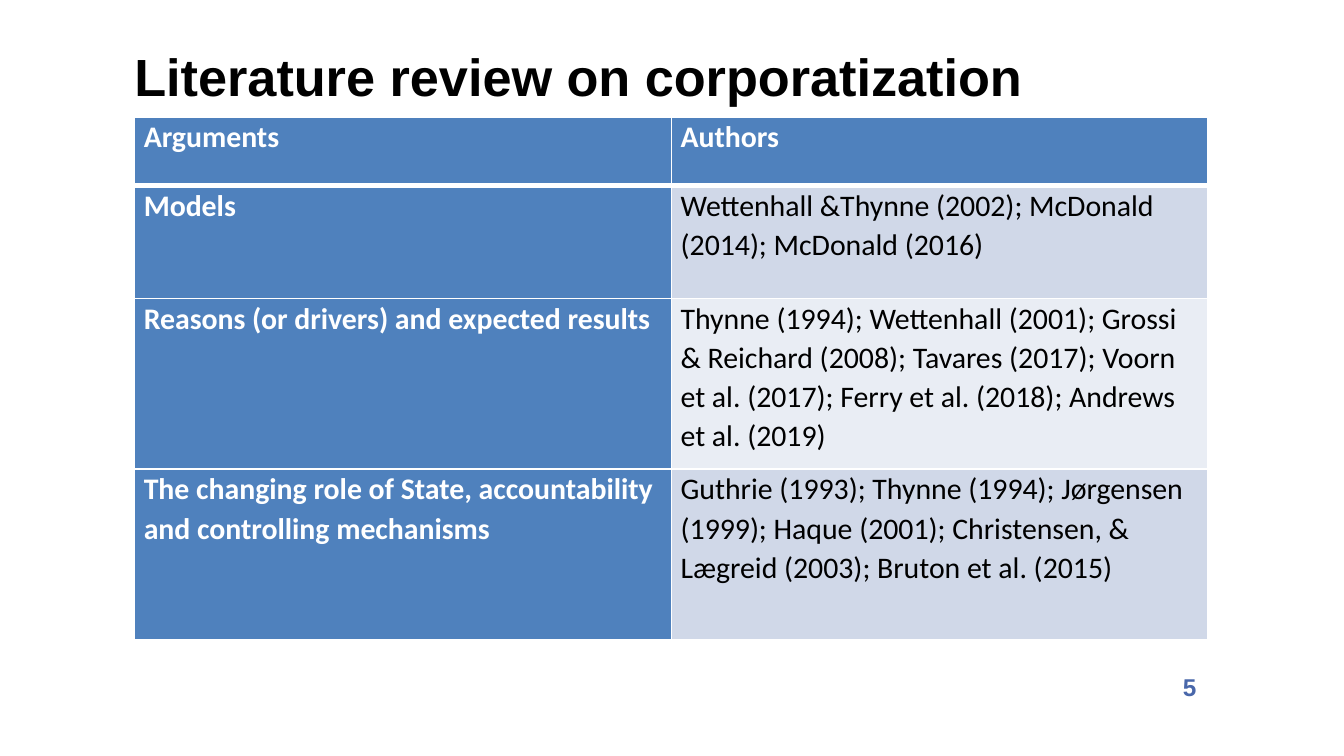
from lxml import etree
from pptx import Presentation
from pptx.dml.color import RGBColor
from pptx.enum.text import MSO_ANCHOR as Anchor, PP_ALIGN as Align
from pptx.oxml.ns import qn
from pptx.util import Inches, Pt

BLACK = RGBColor(0x00, 0x00, 0x00)
WHITE = RGBColor(0xFF, 0xFF, 0xFF)
HEADER_BLUE = RGBColor(0x4F, 0x81, 0xBD)
BAND_DARK = RGBColor(0xD0, 0xD8, 0xE8)
BAND_LIGHT = RGBColor(0xE9, 0xED, 0xF4)
NUMBER_BLUE = RGBColor(0x49, 0x67, 0xAA)

REVIEW = [
    ("Arguments", "Authors"),
    ("Models", "Wettenhall &Thynne (2002); McDonald (2014); McDonald (2016)"),
    ("Reasons (or drivers) and expected results",
     "Thynne (1994); Wettenhall (2001); Grossi & Reichard (2008); Tavares (2017); "
     "Voorn et al. (2017); Ferry et al. (2018); Andrews et al. (2019)"),
    ("The changing role of State, accountability and controlling mechanisms",
     "Guthrie (1993); Thynne (1994); Jørgensen (1999); Haque (2001); "
     "Christensen, & Lægreid (2003); Bruton et al. (2015)"),
]
ROW_HEIGHTS = [0.51, 0.84, 1.27, 1.27]


def add_run(paragraph, text, font_name, size, color, bold=True):
    run = paragraph.add_run()
    run.text = text
    run.font.name = font_name
    run.font.size = Pt(size)
    run.font.bold = bold
    run.font.color.rgb = color


def add_border(cell, side, width):
    line = etree.SubElement(cell._tc.get_or_add_tcPr(), qn(f"a:ln{side}"), w=str(Pt(width)))
    fill = etree.SubElement(line, qn("a:solidFill"))
    etree.SubElement(fill, qn("a:srgbClr"), val=str(WHITE))


# Widescreen slide, 16:9
prs = Presentation()
prs.slide_width = Inches(10)
prs.slide_height = Inches(10 * 9 / 16)
slide = prs.slides.add_slide(prs.slide_layouts[5])

# Title
title = slide.shapes.title
title.left, title.top = Inches(1), Inches(0.33)
title.width, title.height = Inches(7.99), Inches(0.71)
heading = title.text_frame
heading.margin_left = heading.margin_top = heading.margin_right = heading.margin_bottom = 0
heading.vertical_anchor = Anchor.TOP
heading.paragraphs[0].alignment = Align.LEFT
add_run(heading.paragraphs[0], "Literature review on corporatization", "Arial", 28, BLACK)

# Literature table
literature = slide.shapes.add_table(
    len(REVIEW), 2, Inches(1), Inches(0.87), Inches(7.99), Inches(sum(ROW_HEIGHTS))).table
for row, height in zip(literature.rows, ROW_HEIGHTS):
    row.height = Inches(height)

for r, entry in enumerate(REVIEW):
    for c, text in enumerate(entry):
        cell = literature.cell(r, c)
        is_heading = r == 0 or c == 0

        # A thicker rule separates the header row
        add_border(cell, "L", 1)
        add_border(cell, "R", 1)
        add_border(cell, "T", 3 if r == 1 else 1)
        add_border(cell, "B", 3 if r == 0 else 1)

        cell.fill.solid()
        band = BAND_DARK if r % 2 else BAND_LIGHT
        cell.fill.fore_color.rgb = HEADER_BLUE if is_heading else band
        cell.margin_left = cell.margin_right = Inches(0.07)
        cell.margin_top = cell.margin_bottom = 0

        paragraph = cell.text_frame.paragraphs[0]
        paragraph.line_spacing = 1.07
        add_run(paragraph, text, "Calibri", 16, WHITE if is_heading else BLACK, is_heading)

# Page number
page_number = slide.shapes.add_textbox(
    Inches(4.86), Inches(4.95), Inches(4.14), Inches(0.32)).text_frame
page_number.word_wrap = True
page_number.vertical_anchor = Anchor.MIDDLE
page_number.paragraphs[0].alignment = Align.RIGHT
add_run(page_number.paragraphs[0], "5", "Arial", 13, NUMBER_BLUE)

prs.save("out.pptx")
